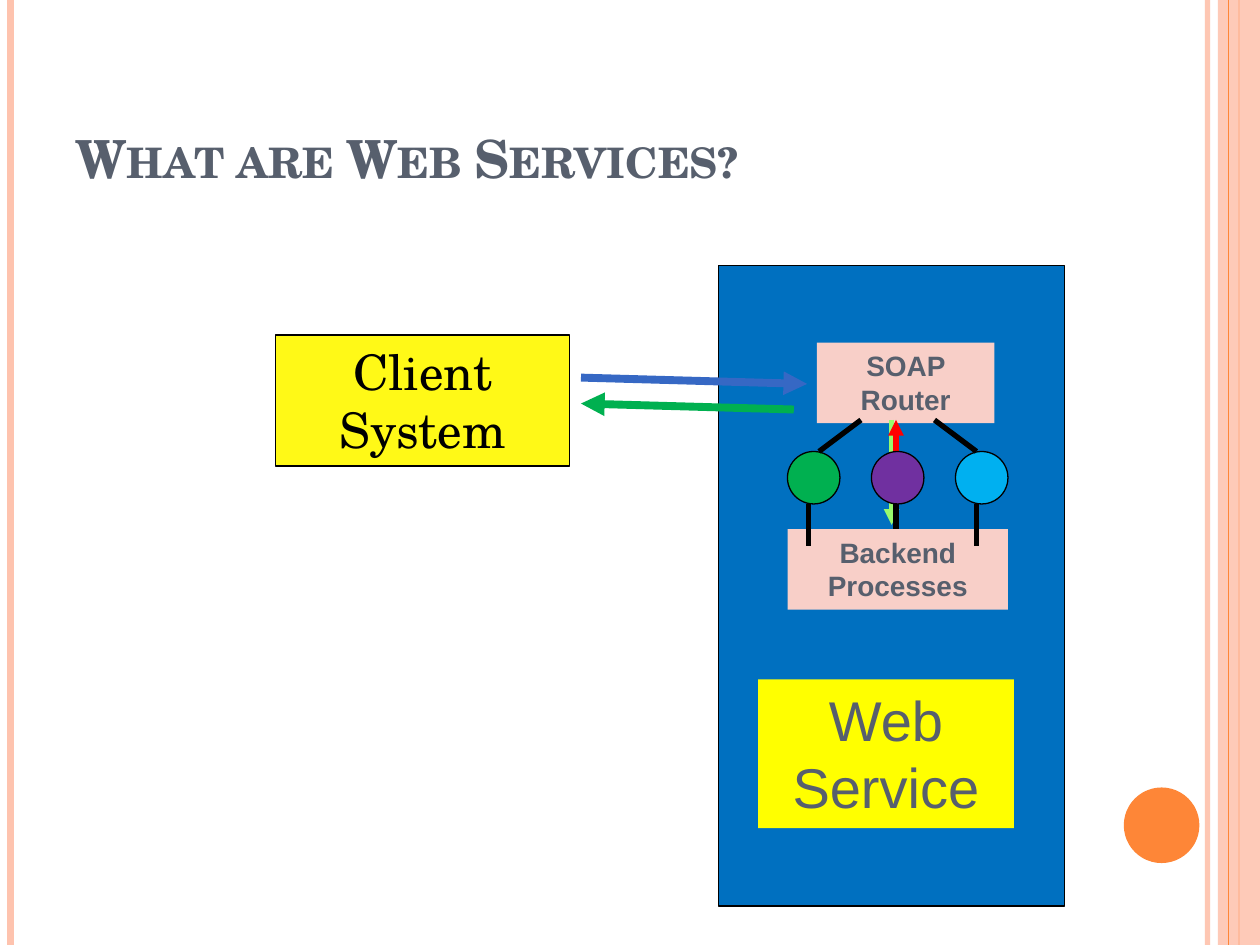
from lxml.etree import SubElement
from pptx import Presentation
from pptx.dml.color import RGBColor
from pptx.enum.shapes import MSO_CONNECTOR as Connector, MSO_SHAPE as Shape
from pptx.enum.text import MSO_ANCHOR as Anchor, PP_ALIGN as Align
from pptx.oxml.ns import qn
from pptx.util import Pt

COLORS = {
    "peach": "FEC3AE", "orange": "FE8637", "slate": "575F6D", "black": "000000",
    "panel": "0070C0", "yellow": "FFFF00", "lemon": "FFF917", "pink": "F8CFC8",
    "green": "00B050", "purple": "7030A0", "sky": "00B0F0", "blue": "3668C4",
    "lime": "98FA6C", "red": "FF0000",
}
SERIF, SANS = "TeX Gyre Schola", "Arial"
WIDTH, HEIGHT = 720, 540


class SlideBuilder:
    """Draws styled elements on one slide; all lengths are in points."""

    def __init__(self, slide):
        self.slide = slide

    def paint(self, fill, color, opacity=100):
        fill.solid()
        fill.fore_color.rgb = RGBColor.from_string(COLORS[color])
        if opacity < 100:
            color_node = fill._xPr.find(".//" + qn("a:srgbClr"))
            SubElement(color_node, qn("a:alpha"), val=str(opacity * 1000))

    def line(self, start, end, color, width, opacity=100, arrow=False):
        connector = self.slide.shapes.add_connector(
            Connector.STRAIGHT, *map(Pt, (*start, *end)))
        connector.line.width = Pt(width)
        self.paint(connector.line.fill, color, opacity)
        if arrow:
            SubElement(connector.line._get_or_add_ln(), qn("a:tailEnd"), type="triangle")
        SubElement(connector._element.spPr, qn("a:effectLst"))

    def shape(self, kind, bounds, fill, outlined=False, opacity=100):
        shape = self.slide.shapes.add_shape(kind, *map(Pt, bounds))
        shape.shadow.inherit = False
        self.paint(shape.fill, fill, opacity)
        if outlined:
            shape.line.width = Pt(0.75)
            self.paint(shape.line.fill, "black")
        else:
            shape.line.fill.background()
        return shape

    def text(self, shape, text, size, font=SANS, color="slate", bold=False,
             align=Align.CENTER, anchor=Anchor.TOP):
        frame = shape.text_frame
        frame.word_wrap = True
        frame.vertical_anchor = anchor
        paragraph = frame.paragraphs[0]
        paragraph.alignment = align
        run = paragraph.add_run()
        run.text = text
        run.font.name, run.font.size, run.font.bold = font, Pt(size), bold
        run.font.color.rgb = RGBColor.from_string(COLORS[color])
        return run

    def label_box(self, bounds, fill, text, size, outlined=False, **style):
        self.text(self.shape(Shape.RECTANGLE, bounds, fill, outlined), text, size, **style)

    def title(self, bounds, text):
        box = self.slide.shapes.add_textbox(*map(Pt, bounds))
        run = self.text(box, text, 30, SERIF, bold=True, align=Align.LEFT,
                        anchor=Anchor.BOTTOM)
        run._r.get_or_add_rPr().set("cap", "small")

    def stripe(self, x, color, width, opacity=100):
        self.line((x, 0), (x, HEIGHT), color, width, opacity)


def draw_frame(builder):
    builder.stripe(690, "peach", 3, 93)
    builder.stripe(6, "peach", 4.5)
    builder.stripe(708, "orange", 1.5)
    builder.shape(Shape.RECTANGLE, (696, 0, 24, HEIGHT), "peach", opacity=87)
    builder.stripe(702, "orange", 0.75)
    builder.shape(Shape.OVAL, (642.2, 450, 43.2, 43.2), "orange")


def draw_diagram(builder):
    router_bottom, node_top, node_size = 240, 258, 30
    node_bottom = node_top + node_size

    def node(column, color):
        bounds = (450 + 48 * column, node_top, node_size, node_size)
        builder.shape(Shape.OVAL, bounds, color, outlined=True)

    def leg(x):
        builder.line((x, node_bottom), (x, node_bottom + 24), "black", 3)

    builder.shape(Shape.RECTANGLE, (410.4, 151.8, 198, 366), "panel", outlined=True)
    builder.label_box((433.2, 388.2, 146.2, 85), "yellow", "Web Service", 32)
    builder.label_box((466.8, 195.8, 101.4, 46), "pink", "SOAP Router", 16, bold=True)
    node(0, "green")
    node(2, "sky")
    builder.line((332, 215.8), (461.2, 219.4), "blue", 4.5, arrow=True)
    builder.line((509.5, router_bottom), (509.5, 300), "lime", 3, arrow=True)
    builder.line((512, 300), (512, router_bottom), "red", 3, arrow=True)
    node(1, "purple")
    builder.line((453.6, 234), (332, 230.6), "green", 4.5, arrow=True)
    leg(512)
    builder.label_box((450, 302.4, 126, 46), "pink", "Backend Processes", 16, bold=True)
    builder.label_box((157.6, 191.4, 168, 75), "lemon", "Client System", 28,
                      outlined=True, font=SERIF, color="black")
    for router_x, node_x in ((492, 468), (534, 558)):
        builder.line((router_x, router_bottom), (node_x, node_top), "black", 3)
    for x in (462, 558):
        leg(x)


def main():
    presentation = Presentation()
    presentation.slide_width, presentation.slide_height = Pt(WIDTH), Pt(HEIGHT)
    builder = SlideBuilder(presentation.slides.add_slide(presentation.slide_layouts[6]))
    draw_frame(builder)
    builder.title((36, 21.6, 588, 90), "What are Web Services?")
    draw_diagram(builder)
    presentation.save("out.pptx")


if __name__ == "__main__":
    main()
